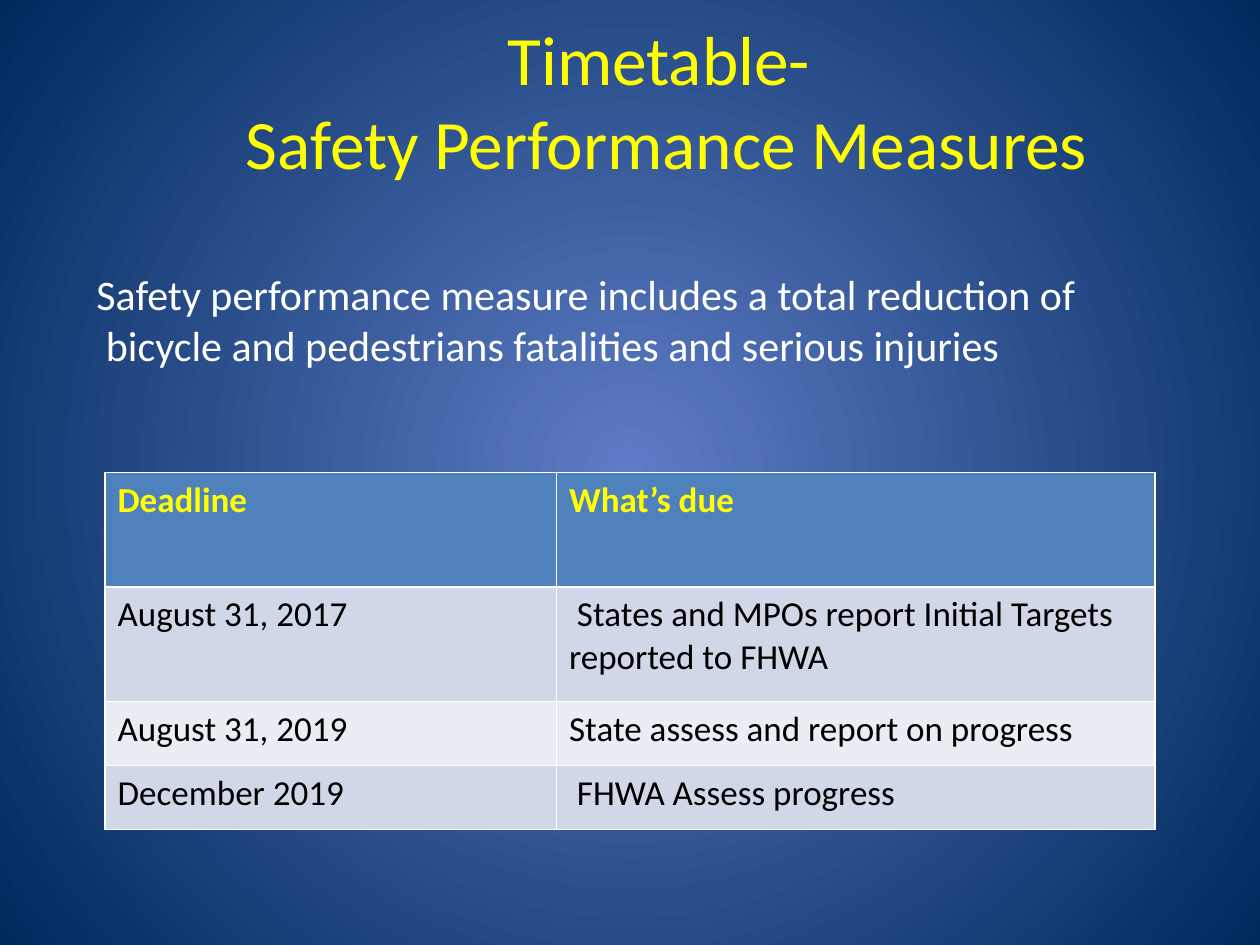
from lxml import etree
from pptx import Presentation
from pptx import util as u
from pptx.dml.color import RGBColor
from pptx.enum import text
from pptx.oxml.ns import qn

YELLOW = RGBColor(0xFF, 0xFF, 0x00)
WHITE = RGBColor(0xFF, 0xFF, 0xFF)
BLACK = RGBColor(0x00, 0x00, 0x00)
GLOW_BLUE = RGBColor(0x5E, 0x7C, 0xC5)
NAVY = RGBColor(0x00, 0x29, 0x5C)
HEADER_BLUE = RGBColor(0x4F, 0x81, 0xBD)
BANDS = (RGBColor(0xE9, 0xED, 0xF4), RGBColor(0xD0, 0xD8, 0xE8))

GRID_COLUMNS, GRID_ROWS = 12, 18
COLUMN = u.Inches(10) / GRID_COLUMNS
ROW = u.Inches(7.5) / GRID_ROWS

TIMETABLE = [
    ("Deadline", "What’s due"),
    ("August 31, 2017", " States and MPOs report Initial Targets reported to FHWA"),
    ("August 31, 2019", "State assess and report on progress"),
    ("December 2019", " FHWA Assess progress"),
]


class SlideBuilder:
    """Draws on one slide; lengths are columns and rows of the grid."""

    font_name = "Calibri"

    def __init__(self, presentation):
        self.slide = presentation.slides.add_slide(presentation.slide_layouts[6])

    def place(self, left, top, width, height):
        return (round(left * COLUMN), round(top * ROW),
                round(width * COLUMN), round(height * ROW))

    def fill_paragraph(self, paragraph, wording, color, **font_format):
        paragraph.text = wording
        for run in paragraph.runs:
            run.font.color.rgb = color
            for name, value in {"name": self.font_name, **font_format}.items():
                setattr(run.font, name, value)

    def radial_background(self, center, edge):
        fill = self.slide.background.fill
        fill.gradient()
        for stop, color, position in zip(fill.gradient_stops, (center, edge), (0, 1)):
            stop.color.rgb = color
            stop.position = position
        gradient = self.slide.element.find(".//" + qn("a:gradFill"))
        circle = etree.SubElement(gradient, qn("a:path"), {"path": "circle"})
        etree.SubElement(circle, qn("a:fillToRect"), dict.fromkeys("ltrb", "50000"))
        gradient.replace(gradient.find(qn("a:lin")), circle)

    def text_box(self, area, paragraphs, frame_format, alignment, **font_format):
        frame = self.slide.shapes.add_textbox(*self.place(*area)).text_frame
        for name, value in {"word_wrap": True, **frame_format}.items():
            setattr(frame, name, value)
        for index, wording in enumerate(paragraphs):
            paragraph = frame.add_paragraph() if index else frame.paragraphs[0]
            paragraph.alignment = alignment
            self.fill_paragraph(paragraph, wording, **font_format)

    def table(self, left, top, widths, heights, records):
        area = self.place(left, top, sum(widths), sum(heights))
        table = self.slide.shapes.add_table(len(heights), len(widths), *area).table
        for column, width in zip(table.columns, widths):
            column.width = round(width * COLUMN)
        for index, (row, height, record) in enumerate(zip(table.rows, heights, records)):
            row.height = round(height * ROW)
            header = index == 0
            for cell, wording in zip(row.cells, record):
                cell.fill.solid()
                cell.fill.fore_color.rgb = HEADER_BLUE if header else BANDS[index % 2]
                self.fill_paragraph(cell.text_frame.paragraphs[0], wording,
                                    YELLOW if header else BLACK,
                                    size=u.Pt(20), bold=header)


def main():
    presentation = Presentation()
    presentation.slide_width = u.Inches(10)
    presentation.slide_height = u.Inches(7.5)

    builder = SlideBuilder(presentation)
    builder.radial_background(GLOW_BLUE, NAVY)
    builder.text_box((1.9, 0.8, 8.9, 2.2),
                     ["Timetable- \vSafety Performance Measures"],
                     {"vertical_anchor": text.MSO_ANCHOR.MIDDLE},
                     text.PP_ALIGN.CENTER, size=u.Pt(39.6), color=YELLOW)
    builder.table(1, 9, (4.3, 5.7), (2.18, 2.18, 1.22, 1.22), TIMETABLE)
    builder.text_box((0.8, 5, 10.48, 3.14),
                     ["Safety performance measure includes a total reduction of",
                      " bicycle and pedestrians fatalities and serious injuries"],
                     {}, text.PP_ALIGN.LEFT, size=u.Pt(24), color=WHITE)
    presentation.save("out.pptx")


if __name__ == "__main__":
    main()
